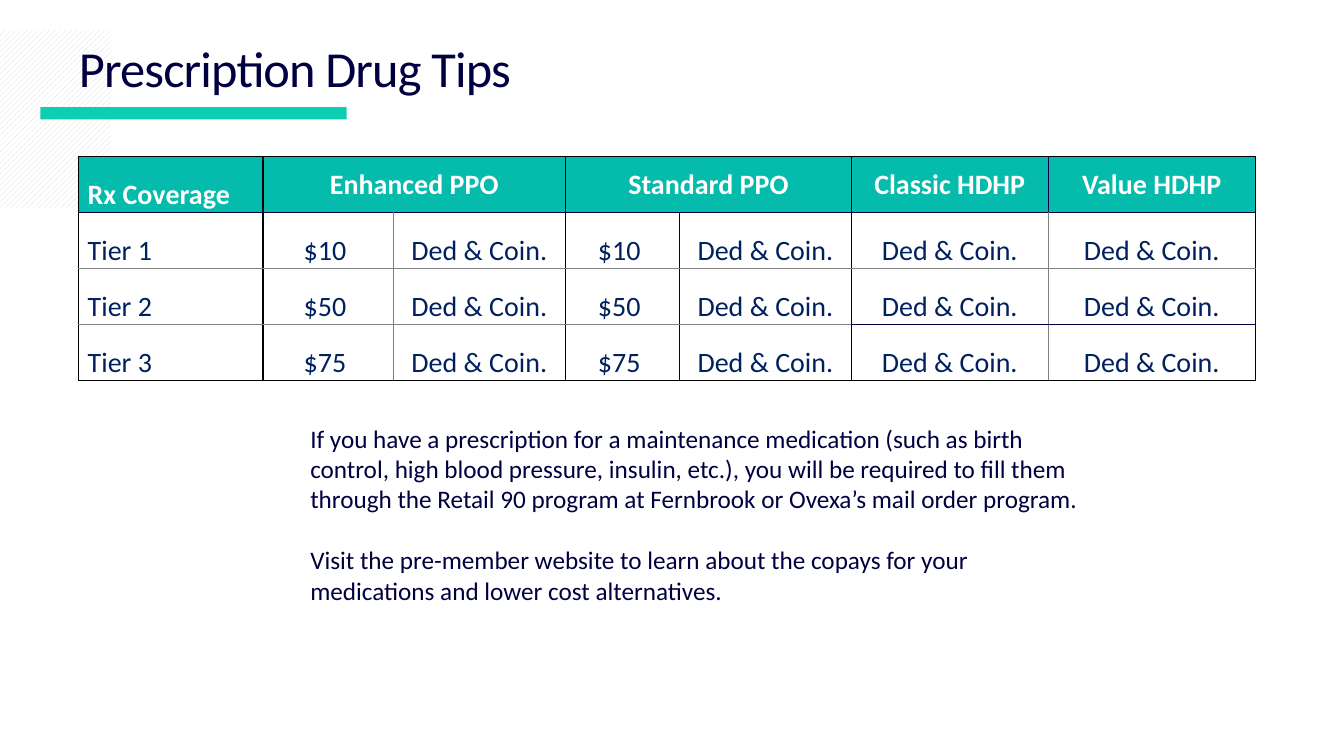
import lxml.etree
import pptx
import pptx.dml.color
import pptx.enum.dml
import pptx.enum.shapes
import pptx.enum.text
import pptx.oxml.ns
import pptx.util

Cm = pptx.util.Cm
Pt = pptx.util.Pt
ALIGN = pptx.enum.text.PP_ALIGN
ANCHOR = pptx.enum.text.MSO_ANCHOR
qn = pptx.oxml.ns.qn

NAVY, TEAL, BLUE, WHITE = "000041", "05BBAC", "002060", "FFFFFF"
OUTER, INNER, THIN = ("000000", 1), (NAVY, 0.5), ("808080", 0.5)
NO_STYLE = "{2D5ABB26-0587-4C30-8999-92F81FD0307C}"

COLUMNS = [4.65, 3.28, 4.34, 2.87, 4.34, 4.95, 5.23]
ROW_HEIGHT = 1.41
HEADER = ["Rx Coverage", "Enhanced PPO", "", "Standard PPO", "",
          "Classic HDHP", "Value HDHP"]
COPAYS = [("Tier 1", "$10 "), ("Tier 2", "$50 "), ("Tier 3", "$75 ")]
REST = "Ded & Coin."
TIPS = [
    "If you have a prescription for a maintenance medication (such as birth "
    "control, high blood pressure, insulin, etc.), you will be required to "
    "fill them through the Retail 90 program at Fernbrook or Ovexa’s mail "
    "order program.",
    "Visit the pre-member website to learn about the copays for your "
    "medications and lower cost alternatives.",
]


def rgb(value):
    return pptx.dml.color.RGBColor.from_string(value)


def write(p, text, size=18, color=NAVY, bold=False, align=ALIGN.LEFT,
          before=0, line=None, spacing=None):
    p.alignment = align
    p.space_before = Pt(before)
    if line:
        p.line_spacing = line
    r = p.add_run()
    r.text = text
    r.font.name = "Calibri"
    r.font.size = Pt(size)
    r.font.bold = bold
    r.font.color.rgb = rgb(color)
    if spacing:
        r.font._element.set("spc", str(round(spacing * 100)))


def add_text(s, left, top, width, height, anchor=ANCHOR.TOP):
    sp = s.shapes.add_textbox(Cm(left), Cm(top), Cm(width), Cm(height))
    tf = sp.text_frame
    tf.word_wrap = True
    tf.vertical_anchor = anchor
    return tf


def add_rect(s, left, top, width, height):
    sp = s.shapes.add_shape(pptx.enum.shapes.MSO_SHAPE.RECTANGLE,
                            Cm(left), Cm(top), Cm(width), Cm(height))
    sp.shadow.inherit = False
    sp.line.fill.background()
    return sp


def add_hatch(s, left, top, width, height):
    fill = add_rect(s, left, top, width, height).fill
    fill.patterned()
    fill.pattern = pptx.enum.dml.MSO_PATTERN.WIDE_UPWARD_DIAGONAL
    fill.fore_color.rgb = rgb("D9D9D9")
    fill.back_color.rgb = rgb(WHITE)


def add_bar(s, left, top, width, height, color):
    fill = add_rect(s, left, top, width, height).fill
    fill.solid()
    fill.fore_color.rgb = rgb(color)


def vertical_edge(row, edge):
    if edge == 4 or (edge == 6 and row == 0):
        return INNER
    return THIN if edge in (2, 6) else OUTER


def horizontal_edge(edge, col):
    if edge in (0, 4):
        return OUTER
    return INNER if edge == 1 or (edge == 3 and col >= 5) else THIN


def set_borders(cell, **borders):
    tcPr = cell._tc.get_or_add_tcPr()
    for side, (color, width) in borders.items():
        ln = lxml.etree.SubElement(tcPr, qn("a:ln" + side), w=str(Pt(width)))
        fill = lxml.etree.SubElement(ln, qn("a:solidFill"))
        lxml.etree.SubElement(fill, qn("a:srgbClr"), val=color)


def format_cell(cell, row, col, text):
    header = row == 0
    cell.margin_left = Cm(0.23 if col == 0 else 0.03)
    cell.margin_right = cell.margin_top = Cm(0.03)
    cell.margin_bottom = 0
    cell.vertical_anchor = ANCHOR.MIDDLE if header and col else ANCHOR.BOTTOM
    right = col + (cell.span_width if cell.is_merge_origin else 1)
    set_borders(cell, L=vertical_edge(row, col), R=vertical_edge(row, right),
                T=horizontal_edge(row, col), B=horizontal_edge(row + 1, col))
    if header:
        cell.fill.solid()
        cell.fill.fore_color.rgb = rgb(TEAL)
    else:
        cell.fill.background()
    write(cell.text_frame.paragraphs[0], text, size=20, bold=header,
          color=WHITE if header else BLUE,
          align=ALIGN.CENTER if col else ALIGN.LEFT)


def add_coverage_table(s, left, top):
    rows = [HEADER] + [[tier, copay, REST, copay, REST, REST, REST]
                       for tier, copay in COPAYS]
    table = s.shapes.add_table(len(rows), len(COLUMNS), Cm(left), Cm(top),
                               Cm(sum(COLUMNS)),
                               Cm(ROW_HEIGHT * len(rows))).table
    table.horz_banding = False
    table._tbl.tblPr.find(qn("a:tableStyleId")).text = NO_STYLE
    for column, width in zip(table.columns, COLUMNS):
        column.width = Cm(width)
    for col in (1, 3):
        table.cell(0, col).merge(table.cell(0, col + 1))
    for row, texts in enumerate(rows):
        table.rows[row].height = Cm(ROW_HEIGHT)
        for col, text in enumerate(texts):
            cell = table.cell(row, col)
            if not cell.is_spanned:
                format_cell(cell, row, col, text)


def add_tips(s, left, top, width, height):
    tf = add_text(s, left, top, width, height)
    tf.auto_size = pptx.enum.text.MSO_AUTO_SIZE.SHAPE_TO_FIT_TEXT
    for i, tip in enumerate(TIPS):
        p = tf.add_paragraph() if i else tf.paragraphs[0]
        write(p, tip, before=22 if i else 0)


def main():
    prs = pptx.Presentation()
    prs.slide_width, prs.slide_height = Cm(33.87), Cm(19.05)
    s = prs.slides.add_slide(prs.slide_layouts[6])
    add_hatch(s, 0, 0.76, 2.8, 4.48)
    add_bar(s, 1.02, 2.7, 7.72, 0.31, "0CCEB2")
    title = add_text(s, 1.74, 0.41, 24.5, 2.76, anchor=ANCHOR.MIDDLE)
    write(title.paragraphs[0], "Prescription Drug Tips", size=36,
          line=0.9, spacing=-0.6)
    add_coverage_table(s, 1.98, 3.94)
    add_tips(s, 7.57, 10.54, 19.89, 5.64)
    prs.save("out.pptx")


if __name__ == "__main__":
    main()
